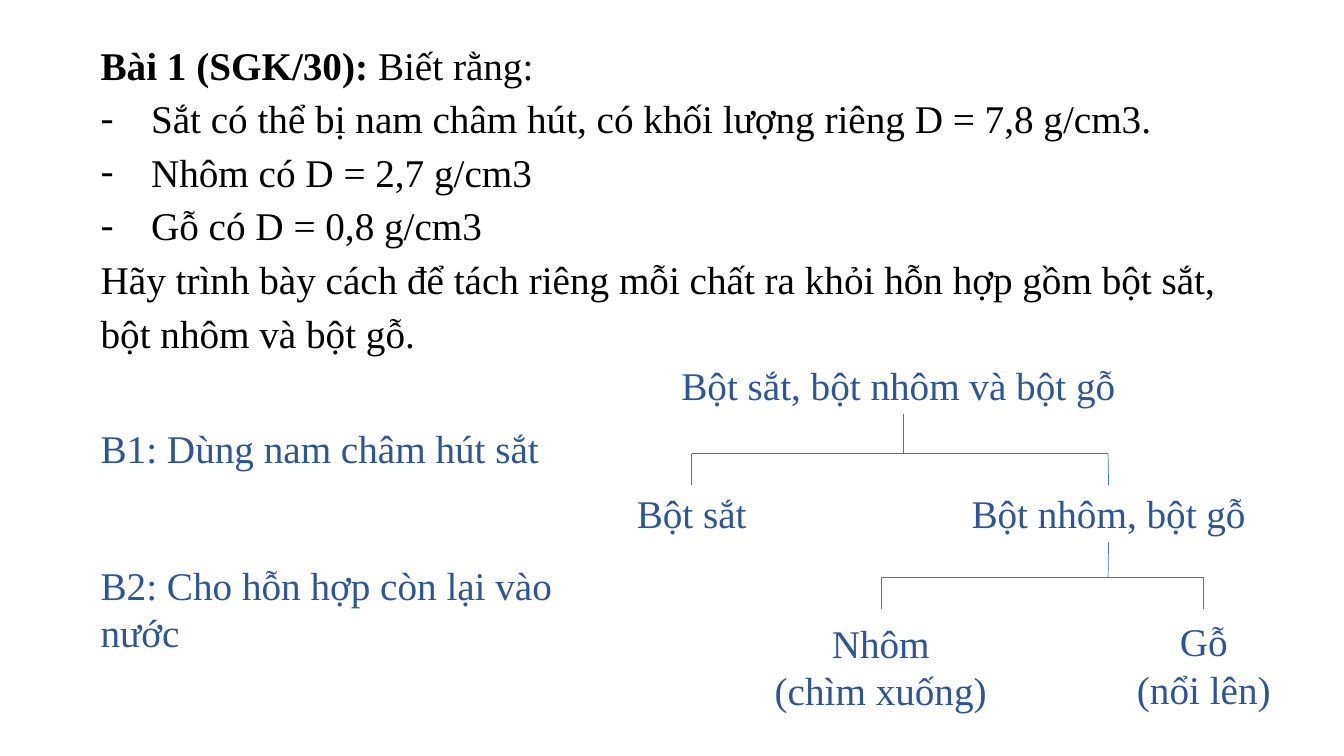
"""Builds a slide on separating a mixture of iron, aluminium and wood powders."""
from lxml import etree
from pptx import Presentation
from pptx import util as u
from pptx.dml.color import RGBColor
from pptx.enum import shapes, text
from pptx.oxml.ns import qn

BLACK, NAVY, BLUE = "000000", "2F5597", "4472C4"
LEFT, CENTER = text.PP_ALIGN.LEFT, text.PP_ALIGN.CENTER

presentation = Presentation()
presentation.slide_width = u.Inches(13.33)
presentation.slide_height = u.Inches(7.5)
slide = presentation.slides.add_slide(presentation.slide_layouts[6])


def add_text(left, top, width, height, content, color, alignment):
    box = slide.shapes.add_textbox(*map(u.Inches, (left, top, width, height)))
    frame = box.text_frame
    frame.word_wrap = True
    frame.auto_size = text.MSO_AUTO_SIZE.SHAPE_TO_FIT_TEXT
    frame.text = content
    for paragraph in frame.paragraphs:
        paragraph.alignment = alignment
        for run in paragraph.runs:
            run.font.name = "Times New Roman"
            run.font.size = u.Pt(28)
            run.font.color.rgb = RGBColor.from_string(color)
    return box


def add_line(x1, y1, x2, y2):
    line = slide.shapes.add_connector(
        shapes.MSO_CONNECTOR.STRAIGHT, *map(u.Inches, (x1, y1, x2, y2)))
    line.line.color.rgb = RGBColor.from_string(BLUE)
    line.line.width = u.Pt(0.5)
    etree.SubElement(line._element.spPr, qn("a:effectLst"))
    return line


problem = add_text(0.9, 0.29, 11.52, 3.28, "\n".join([
    "Bài 1 (SGK/30): ",
    "Sắt có thể bị nam châm hút, có khối lượng riêng D = 7,8 g/cm3.",
    "Nhôm có D = 2,7 g/cm3",
    "Gỗ có D = 0,8 g/cm3",
    "Hãy trình bày cách để tách riêng mỗi chất ra khỏi hỗn hợp gồm bột sắt, "
    "bột nhôm và bột gỗ.",
]), BLACK, LEFT)
paragraphs = problem.text_frame.paragraphs
for paragraph in paragraphs:
    paragraph.line_spacing = 1.14
for paragraph in paragraphs[1:4]:
    properties = paragraph._p.get_or_add_pPr()
    properties.set("marL", str(u.Inches(0.5)))
    properties.set("indent", str(-u.Inches(0.5)))
    etree.SubElement(properties, qn("a:buFont"), typeface="Times New Roman")
    etree.SubElement(properties, qn("a:buChar"), char="-")

paragraphs[0].runs[0].font.bold = True
intro = paragraphs[0].add_run()
intro.text = "Biết rằng:"
intro.font.name = "Times New Roman"
intro.font.size = u.Pt(28)
intro.font.color.rgb = RGBColor.from_string(BLACK)

for top, height, step in [
    (4.16, 0.57, "B1: Dùng nam châm hút sắt"),
    (5.52, 1.04, "B2: Cho hỗn hợp còn lại vào nước"),
]:
    add_text(0.9, top, 4.71, height, step, NAVY, LEFT)

mixture, iron, remainder, aluminium, wood = [
    add_text(*place, content, NAVY, CENTER) for *place, content in [
        (6.34, 3.54, 5.14, 0.57, "Bột sắt, bột nhôm và bột gỗ"),
        (5.95, 4.81, 1.82, 0.57, "Bột sắt"),
        (9.51, 4.81, 2.97, 0.57, "Bột nhôm, bột gỗ"),
        (7.46, 6.09, 2.55, 1.04, "Nhôm\n(chìm xuống)"),
        (10.96, 6.08, 1.96, 1.04, "Gỗ\n(nổi lên)"),
    ]
]

for stem, stem_top, bar, left, right, bottom in [
    (8.96, 4.11, 4.5, 6.86, 10.99, 4.81),
    (10.99, 5.38, 5.73, 8.74, 11.94, 6.04),
]:
    trunk = add_line(stem, stem_top, stem, bar)
    add_line(left, bar, right, bar)
    left_branch = add_line(left, bar, left, bottom)
    right_branch = add_line(right, bar, right, bottom)
    if bottom < 5:
        left_branch.end_connect(iron, 0)
        right_branch.end_connect(remainder, 0)
    else:
        trunk.begin_connect(remainder, 2)

presentation.save("out.pptx")
